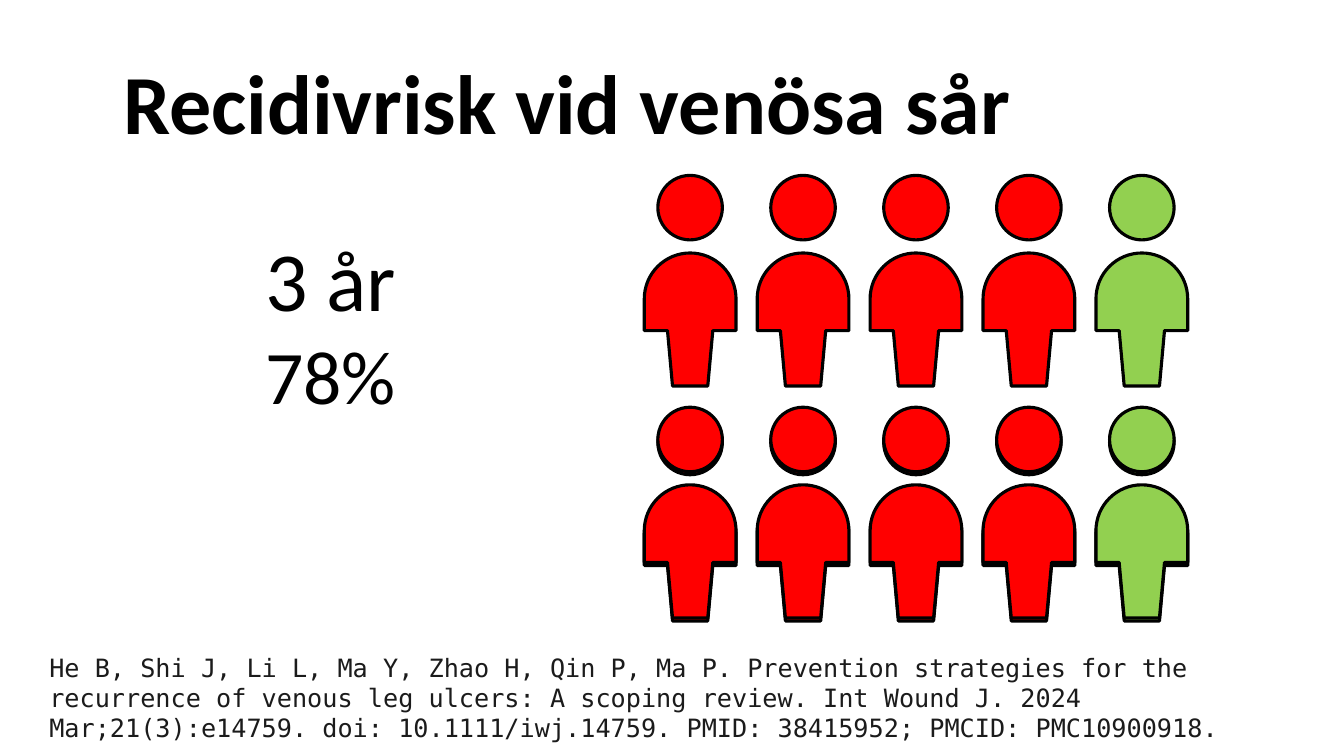
from math import cos, pi, sin

from pptx import Presentation
from pptx.dml.color import RGBColor
from pptx.enum.shapes import MSO_SHAPE
from pptx.enum.text import MSO_ANCHOR, MSO_AUTO_SIZE, PP_ALIGN
from pptx.util import Inches, Pt

BLACK = RGBColor(0x00, 0x00, 0x00)
INK = RGBColor(0x1B, 0x1B, 0x1B)
RED = RGBColor(0xFF, 0x00, 0x00)
GREEN = RGBColor(0x92, 0xD0, 0x50)

PEOPLE_PER_ROW = 5
RECURRING_PER_ROW = 4
FIRST_LEFT = 6.39
PITCH = 1.12
BODY_WIDTH = 0.91
HEAD_SIZE = 0.64
BODY_DROP = 0.77
ARC_STEPS = 32

CITATION = (
    "He B, Shi J, Li L, Ma Y, Zhao H, Qin P, Ma P. Prevention strategies for the "
    "recurrence of venous leg ulcers: A scoping review. Int Wound J. 2024 "
    "Mar;21(3):e14759. doi: 10.1111/iwj.14759. PMID: 38415952; PMCID: PMC10900918."
)


def write(para, text, size, font="Calibri", color=BLACK, bold=False):
    span = para.add_run()
    span.text = text
    span.font.name = font
    span.font.size = Pt(size)
    span.font.bold = bold
    span.font.color.rgb = color


def body_outline():
    """Points of a round-shouldered body, in inches from its top left corner."""
    radius = BODY_WIDTH / 2
    angles = [pi * step / ARC_STEPS for step in range(ARC_STEPS + 1)]
    shoulders = [(radius + radius * cos(a), radius - radius * sin(a)) for a in angles]
    left_side = [(0, 0.77), (0.23, 0.77), (0.28, 1.32)]
    right_side = [(BODY_WIDTH - x, y) for x, y in reversed(left_side)]
    return right_side + shoulders + left_side


class RiskSlide:
    def __init__(self, deck):
        self.page = deck.slides.add_slide(deck.slide_layouts[5])
        self.line_width = Pt(2.25)

    def title(self, text, left, top, width, height):
        box = self.page.shapes.title
        box.left, box.top = Inches(left), Inches(top)
        box.width, box.height = Inches(width), Inches(height)
        frame = box.text_frame
        frame.vertical_anchor = MSO_ANCHOR.MIDDLE
        frame.auto_size = MSO_AUTO_SIZE.NONE
        para = frame.paragraphs[0]
        para.alignment = PP_ALIGN.LEFT
        para.line_spacing = 0.9
        write(para, text, 60, bold=True)

    def text(self, lines, left, top, width, height, wrap=True, **style):
        """Add a text box from (text, size) lines."""
        box = self.page.shapes.add_textbox(
            Inches(left), Inches(top), Inches(width), Inches(height))
        frame = box.text_frame
        frame.word_wrap = wrap
        frame.auto_size = MSO_AUTO_SIZE.SHAPE_TO_FIT_TEXT
        for index, (line, size) in enumerate(lines):
            para = frame.add_paragraph() if index else frame.paragraphs[0]
            write(para, line, size, **style)

    def paint(self, shape, color):
        shape.shadow.inherit = False
        shape.fill.solid()
        shape.fill.fore_color.rgb = color
        shape.line.color.rgb = BLACK
        shape.line.width = self.line_width

    def person(self, left, top, color):
        group = self.page.shapes.add_group_shape()
        points = [(Inches(left + x), Inches(top + BODY_DROP + y))
                  for x, y in body_outline()]
        builder = group.shapes.build_freeform(*points[0])
        builder.add_line_segments(points[1:], close=True)
        self.paint(builder.convert_to_shape(), color)
        head = group.shapes.add_shape(
            MSO_SHAPE.OVAL, Inches(left + (BODY_WIDTH - HEAD_SIZE) / 2), Inches(top),
            Inches(HEAD_SIZE), Inches(HEAD_SIZE))
        self.paint(head, color)

    def people_row(self, top):
        for index in range(PEOPLE_PER_ROW):
            color = RED if index < RECURRING_PER_ROW else GREEN
            self.person(FIRST_LEFT + index * PITCH, top, color)


def main():
    deck = Presentation()
    deck.slide_width, deck.slide_height = Inches(13.33), Inches(7.5)
    slide = RiskSlide(deck)
    slide.title("Recidivrisk vid venösa sår", 1.12, 0.34, 11.5, 1.45)
    slide.people_row(4.07)
    slide.text([("3 år", 60), ("78%", 54)], 2.53, 2.21, 1.51, 2.02, wrap=False)
    slide.text([(CITATION, 18)], 0.39, 6.42, 12.61, 1.01,
               font="DejaVu Sans Mono", color=INK)
    # The lower row is doubled with a slight offset, which thickens its lower edges.
    for top in (1.74, 4.04):
        slide.people_row(top)
    deck.save("out.pptx")


if __name__ == "__main__":
    main()
